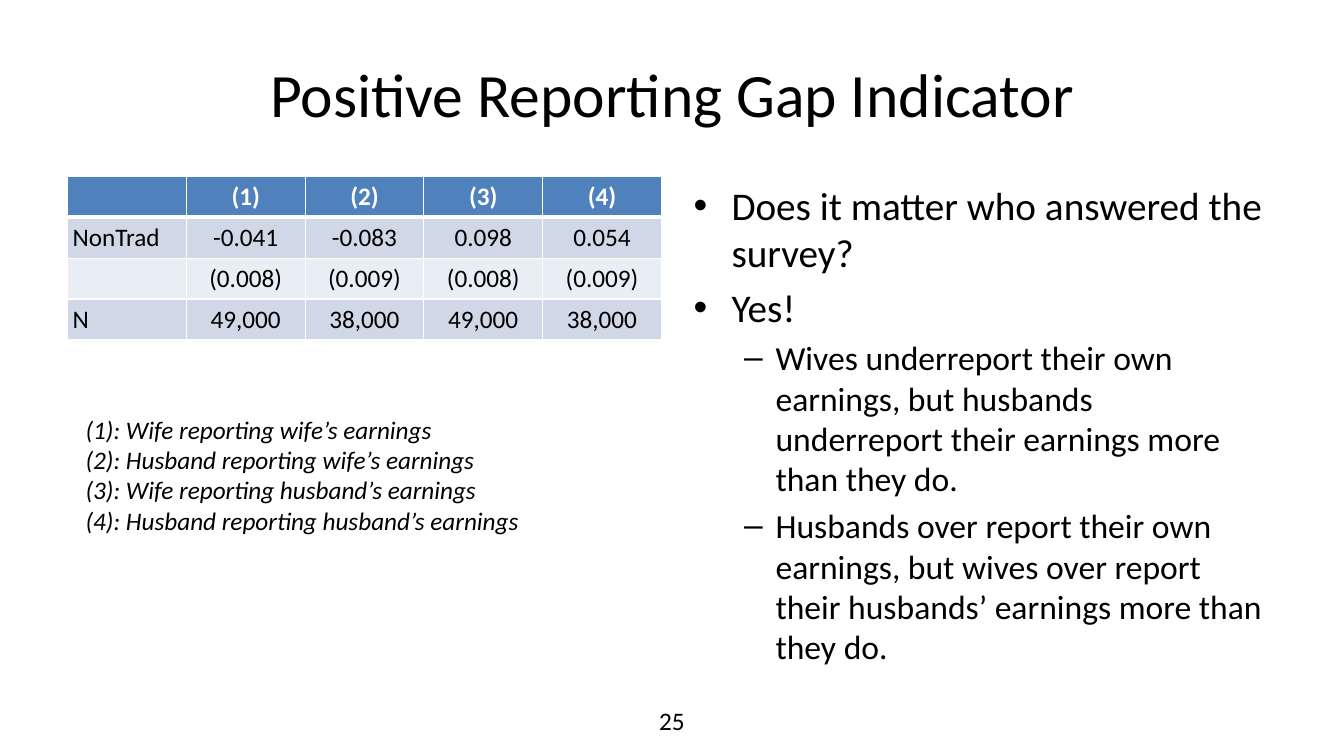
from lxml.etree import SubElement
from pptx import Presentation
from pptx.dml.color import RGBColor
from pptx.enum.text import MSO_ANCHOR, PP_ALIGN
from pptx.oxml.ns import qn
from pptx.util import Inches, Pt

COLORS = {
    "ink": "000000",
    "white": "FFFFFF",
    "header": "4F81BD",
    "odd": "D0D8E8",
    "even": "E9EDF4",
}


class SlideBuilder:
    font_name = "Calibri"

    def __init__(self, slide):
        self.slide = slide

    def add_run(self, paragraph, text, size, color="ink", align=None, **style):
        paragraph.alignment = align
        run = paragraph.add_run()
        run.text = text
        formats = {"name": self.font_name, "size": Pt(size), **style}
        for attribute, value in formats.items():
            setattr(run.font, attribute, value)
        run.font.color.rgb = RGBColor.from_string(COLORS[color])

    def place(self, shape, left, top, width, height):
        bounds = {"left": left, "top": top, "width": width, "height": height}
        for attribute, value in bounds.items():
            setattr(shape, attribute, Inches(value))

    def title(self, text, bounds):
        heading = self.slide.shapes.title
        self.place(heading, *bounds)
        heading.text_frame.vertical_anchor = MSO_ANCHOR.MIDDLE
        self.add_run(heading.text_frame.paragraphs[0], text, 44, align=PP_ALIGN.CENTER)

    def bullets(self, points, bounds):
        body = self.slide.placeholders[1]
        self.place(body, *bounds)
        frame = body.text_frame
        for index, (level, text) in enumerate(points):
            paragraph = frame.add_paragraph() if index else frame.paragraphs[0]
            paragraph.level = level
            if index == 0:
                paragraph.space_before = Pt(0)
            self.add_run(paragraph, text, 24 if level else 28)

    def text(self, lines, bounds, align=None, **style):
        frame = self.slide.shapes.add_textbox(*map(Inches, bounds)).text_frame
        frame.word_wrap = True
        for index, line in enumerate(lines):
            paragraph = frame.add_paragraph() if index else frame.paragraphs[0]
            self.add_run(paragraph, line, 18, align=align, **style)

    def borders(self, cell, top, bottom):
        properties = cell._tc.get_or_add_tcPr()
        for side, points in {"L": 1, "R": 1, "T": top, "B": bottom}.items():
            line = SubElement(properties, qn(f"a:ln{side}"), w=str(int(Pt(points))))
            fill = SubElement(line, qn("a:solidFill"))
            SubElement(fill, qn("a:srgbClr"), val=COLORS["white"])

    def table(self, rows, bounds):
        size = len(rows), len(rows[0])
        grid = self.slide.shapes.add_table(*size, *map(Inches, bounds)).table
        margins = ("margin_left", "margin_right", "margin_top", "margin_bottom")
        for row, values in enumerate(rows):
            header = row == 0
            fill = "header" if header else "odd" if row % 2 else "even"
            for column, value in enumerate(values):
                cell = grid.cell(row, column)
                for margin in margins:
                    setattr(cell, margin, Inches(0.05))
                self.borders(cell, top=3 if row == 1 else 1, bottom=3 if header else 1)
                cell.fill.solid()
                cell.fill.fore_color.rgb = RGBColor.from_string(COLORS[fill])
                if value:
                    self.add_run(
                        cell.text_frame.paragraphs[0],
                        value,
                        18,
                        "white" if header else "ink",
                        PP_ALIGN.CENTER if column else PP_ALIGN.LEFT,
                        bold=header,
                    )


def main():
    presentation = Presentation()
    presentation.slide_width = Inches(13.33)
    presentation.slide_height = Inches(7.5)
    builder = SlideBuilder(presentation.slides.add_slide(presentation.slide_layouts[1]))

    builder.title("Positive Reporting Gap Indicator", (0.67, 0.3, 12, 1.25))
    builder.table(
        [
            ["", "(1)", "(2)", "(3)", "(4)"],
            ["NonTrad", "-0.041", "-0.083", "0.098", "0.054"],
            ["", "(0.008)", "(0.009)", "(0.008)", "(0.009)"],
            ["N", "49,000", "38,000", "49,000", "38,000"],
        ],
        (0.67, 1.75, 5.89, 1.6),
    )
    builder.bullets(
        [
            (0, "Does it matter who answered the survey?"),
            (0, "Yes!"),
            (1, "Wives underreport their own earnings, but husbands "
                "underreport their earnings more than they do."),
            (1, "Husbands over report their own earnings, but wives over report "
                "their husbands’ earnings more than they do."),
        ],
        (6.78, 1.75, 5.89, 4.95),
    )
    builder.text(["25"], (5.11, 6.95, 3.11, 0.4), PP_ALIGN.CENTER)
    builder.text(
        [
            "(1): Wife reporting wife’s earnings",
            "(2): Husband reporting wife’s earnings",
            "(3): Wife reporting husband’s earnings",
            "(4): Husband reporting husband’s earnings",
        ],
        (0.75, 4.06, 5.75, 1.31),
        italic=True,
    )
    presentation.save("out.pptx")


if __name__ == "__main__":
    main()
